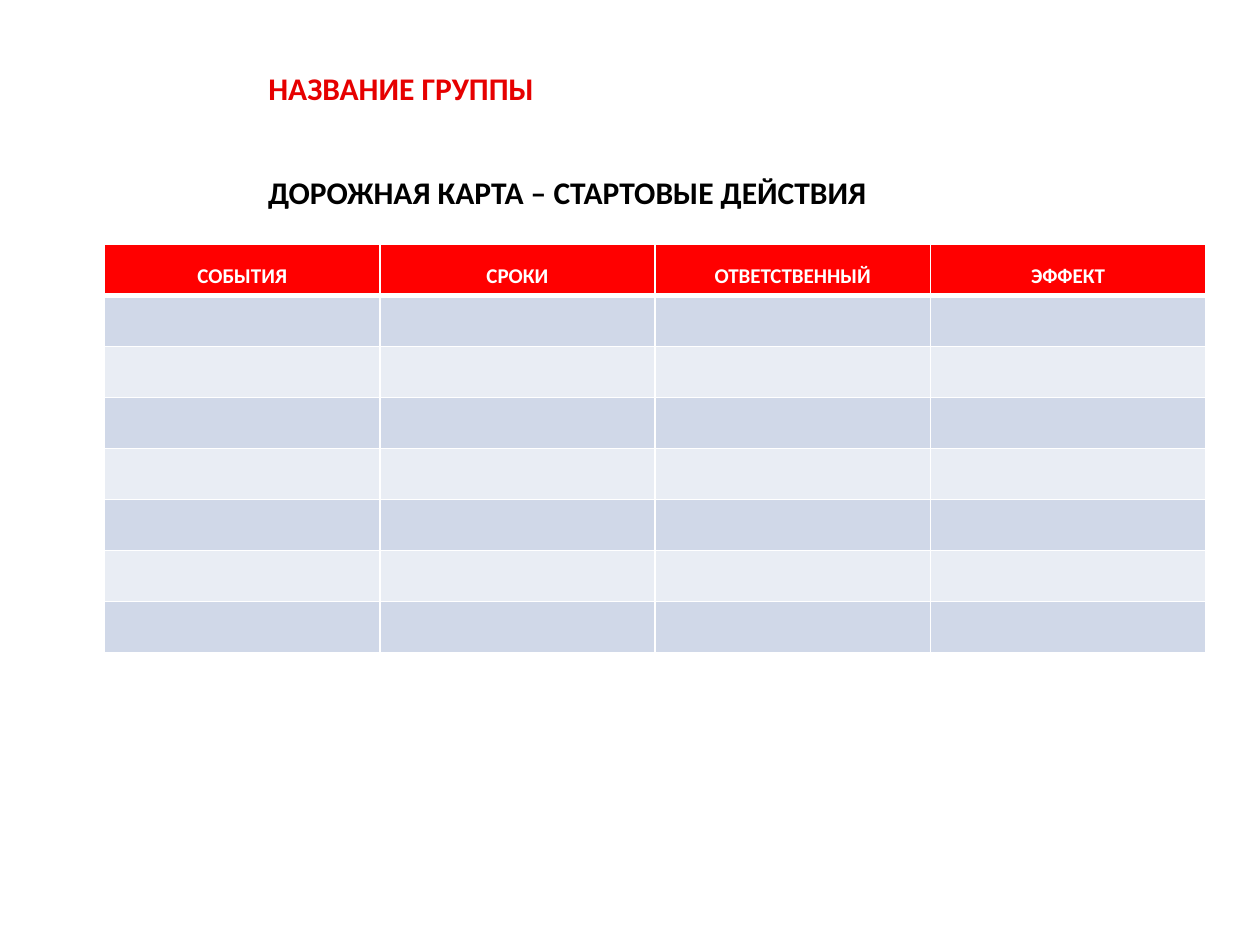
from dataclasses import dataclass

from lxml import etree
from pptx import Presentation
from pptx.dml.color import RGBColor
from pptx.enum.text import MSO_ANCHOR, MSO_AUTO_SIZE, PP_ALIGN
from pptx.oxml.ns import qn
from pptx.util import Inches, Pt

LEFT, CENTER = PP_ALIGN.LEFT, PP_ALIGN.CENTER
TOP, MIDDLE = MSO_ANCHOR.TOP, MSO_ANCHOR.MIDDLE
TITLE_ONLY = 5

GROUP_NAME = "НАЗВАНИЕ ГРУППЫ"
HEADING = "ДОРОЖНАЯ КАРТА – СТАРТОВЫЕ ДЕЙСТВИЯ"
COLUMNS = ["СОБЫТИЯ", "СРОКИ", "ОТВЕТСТВЕННЫЙ", "ЭФФЕКТ"]
EMPTY_ROWS = 7


@dataclass(frozen=True)
class Theme:
    font: str = "Calibri"
    heading_size: int = 18
    table_size: int = 12
    accent: str = "E60000"
    text: str = "000000"
    header: str = "FF0000"
    bands: tuple = ("D0D8E8", "E9EDF4")
    border: str = "FFFFFF"


THEME = Theme()
SLIDE_W, SLIDE_H = Inches(10), Inches(7.5)
TEXT_LEFT = Inches(2.03)
TABLE_LEFT, TABLE_TOP = Inches(0.83), Inches(1.94)
TABLE_W, TABLE_H = Inches(8.74), Inches(3.24)


def write(tf, text, size, color, align=LEFT, anchor=TOP, spacing=None):
    tf.word_wrap = True
    tf.vertical_anchor = anchor
    p = tf.paragraphs[0]
    p.alignment = align
    p.line_spacing = spacing
    r = p.add_run()
    r.text = text
    r.font.name, r.font.size, r.font.bold = THEME.font, Pt(size), True
    r.font.color.rgb = RGBColor.from_string(color)


def style_cell(cell, fill, bottom=1):
    """Set the cell's borders, widths in points, and then its fill."""
    tc_pr = cell._tc.get_or_add_tcPr()
    for side, width in (("L", 1), ("R", 1), ("T", 1), ("B", bottom)):
        line = etree.SubElement(tc_pr, qn(f"a:ln{side}"), w=str(Pt(width)))
        solid = etree.SubElement(line, qn("a:solidFill"))
        etree.SubElement(solid, qn("a:srgbClr"), val=THEME.border)
    cell.fill.solid()
    cell.fill.fore_color.rgb = RGBColor.from_string(fill)


def add_headings(slide):
    title = slide.shapes.title
    title.left, title.top = TEXT_LEFT, Inches(0.5)
    title.width, title.height = Inches(7.15), Inches(0.39)
    title.text_frame.auto_size = MSO_AUTO_SIZE.NONE
    write(title.text_frame, GROUP_NAME, THEME.heading_size, THEME.accent,
          anchor=MIDDLE)
    box = slide.shapes.add_textbox(TEXT_LEFT, Inches(1.32), Inches(5), Inches(0.88))
    write(box.text_frame, HEADING, THEME.heading_size, THEME.text)


def add_roadmap(slide):
    rows = 1 + EMPTY_ROWS
    table = slide.shapes.add_table(rows, len(COLUMNS), TABLE_LEFT, TABLE_TOP,
                                   TABLE_W, TABLE_H).table
    for col, name in enumerate(COLUMNS):
        header = table.cell(0, col)
        style_cell(header, THEME.header, bottom=3)
        write(header.text_frame, name, THEME.table_size, THEME.border,
              align=CENTER, spacing=1.5)
        for row in range(1, rows):
            style_cell(table.cell(row, col), THEME.bands[(row - 1) % 2])


def main():
    prs = Presentation()
    prs.slide_width, prs.slide_height = SLIDE_W, SLIDE_H
    slide = prs.slides.add_slide(prs.slide_layouts[TITLE_ONLY])
    add_headings(slide)
    add_roadmap(slide)
    prs.save("out.pptx")


if __name__ == "__main__":
    main()
